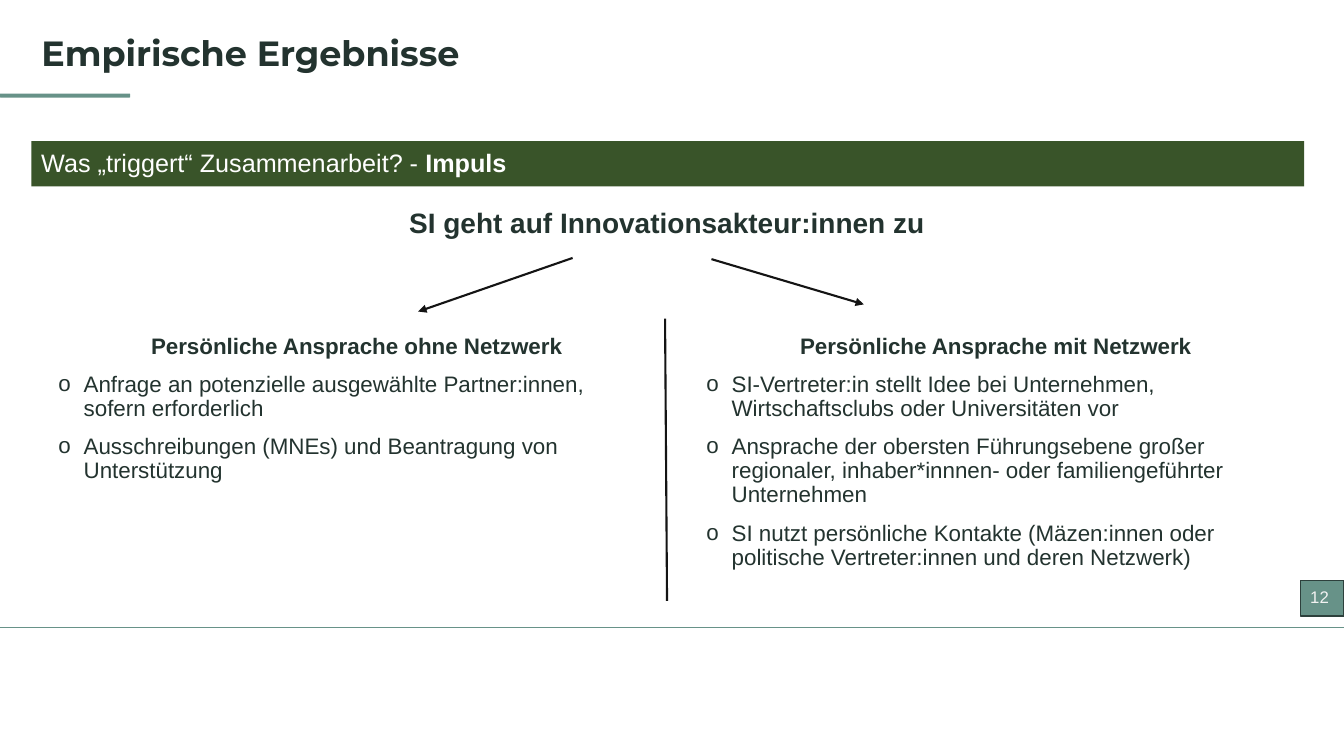
"""Build the slide on what triggers collaboration."""
from lxml import etree
from pptx import Presentation
from pptx.dml.color import RGBColor
from pptx.enum.shapes import MSO_CONNECTOR, MSO_SHAPE
from pptx.enum.text import MSO_ANCHOR, PP_ALIGN
from pptx.oxml.ns import qn
from pptx.util import Cm, Pt

STRAIGHT = MSO_CONNECTOR.STRAIGHT
RECT, ROUND = MSO_SHAPE.RECTANGLE, MSO_SHAPE.ROUNDED_RECTANGLE
TOP, MIDDLE = MSO_ANCHOR.TOP, MSO_ANCHOR.MIDDLE
LEFT, CENTER = PP_ALIGN.LEFT, PP_ALIGN.CENTER

INK, BLACK, WHITE = "23332F", "141414", "FFFFFF"
TEAL, GREEN = "679288", "395429"

TITLE = "Empirische Ergebnisse"
QUESTION, TOPIC = "Was „triggert“ Zusammenarbeit? - ", "Impuls"
HEADLINE = "SI geht auf Innovationsakteur:innen zu"
NUMBER = "12"
COLUMNS = [
    (1.22, 15.54, "Persönliche Ansprache ohne Netzwerk", [
        "Anfrage an potenzielle ausgewählte Partner:innen,\vsofern erforderlich",
        "Ausschreibungen (MNEs) und Beantragung von Unterstützung",
    ]),
    (17.55, 15.09, "Persönliche Ansprache mit Netzwerk", [
        "SI-Vertreter:in stellt Idee bei Unternehmen, Wirtschaftsclubs oder Universitäten vor",
        "Ansprache der obersten Führungsebene großer regionaler, "
        "inhaber*innnen- oder familiengeführter Unternehmen",
        "SI nutzt persönliche Kontakte (Mäzen:innen oder politische "
        "Vertreter:innen und deren Netzwerk)",
    ]),
]
LINES = [
    ((0, 15.8), (33.87, 15.8), TEAL, 0.75, False),
    ((14.43, 6.5), (10.54, 7.85), BLACK, 1.5, True),
    ((17.93, 6.53), (21.77, 7.67), BLACK, 1.5, True),
    ((16.76, 8.03), (16.81, 15.14), BLACK, 1.5, False),
]


def rgb(color):
    return RGBColor.from_string(color)


def add_box(slide, kind, box, fill, line=None):
    sp = slide.shapes.add_shape(kind, *map(Cm, box))
    sp.shadow.inherit = False
    sp.fill.solid()
    sp.fill.fore_color.rgb = rgb(fill)
    if line:
        sp.line.color.rgb = rgb(line)
        sp.line.width = Pt(1)
    else:
        sp.line.fill.background()
    return sp


def add_line(slide, start, end, color, width, arrow):
    cx = slide.shapes.add_connector(STRAIGHT, *map(Cm, start + end))
    cx.line.color.rgb = rgb(color)
    cx.line.width = Pt(width)
    if arrow:
        ln = cx.line._get_or_add_ln()
        etree.SubElement(ln, qn("a:tailEnd"), type="triangle")
    etree.SubElement(cx._element.spPr, qn("a:effectLst"))


def add_text(slide, box):
    tf = slide.shapes.add_textbox(*map(Cm, box)).text_frame
    tf.word_wrap = True
    return tf


def style(p, size, color, bold=False, align=LEFT, font="Arial", before=0):
    p.alignment = align
    p.line_spacing = 0.9
    p.space_before = Pt(before)
    for r in p.runs:
        r.font.name = font
        r.font.size = Pt(size)
        r.font.bold = bold
        r.font.color.rgb = rgb(color)


def add_bullet(p):
    pPr = p._p.get_or_add_pPr()
    pPr.set("marL", str(Cm(0.64)))
    pPr.set("indent", str(-Cm(0.64)))
    clr = etree.SubElement(pPr, qn("a:buClr"))
    etree.SubElement(clr, qn("a:srgbClr"), val=INK)
    etree.SubElement(pPr, qn("a:buFont"), typeface="Arial")
    etree.SubElement(pPr, qn("a:buChar"), char="o")


def add_column(slide, left, width, heading, items):
    tf = add_text(slide, (left, 8.31, width, 7.4))
    tf.text = heading
    style(tf.paragraphs[0], 16, INK, True, CENTER)
    for item in items:
        p = tf.add_paragraph()
        p.text = item
        add_bullet(p)
        style(p, 16, INK, before=10)


def main():
    prs = Presentation()
    prs.slide_width, prs.slide_height = Cm(33.87), Cm(19.05)
    slide = prs.slides.add_slide(prs.slide_layouts[5])

    title = slide.shapes.title
    title.left, title.top, title.width, title.height = map(Cm, (0.79, 0.79, 20, 1.32))
    title.text_frame.text = TITLE
    title.text_frame.vertical_anchor = TOP
    style(title.text_frame.paragraphs[0], 25, INK, True, font="Montserrat")

    add_box(slide, ROUND, (0, 2.36, 3.28, 0.1), TEAL)
    bar = add_box(slide, RECT, (0.79, 3.56, 32.08, 1.14), GREEN)
    tf = bar.text_frame
    tf.text = QUESTION
    tf.vertical_anchor = MIDDLE
    p = tf.paragraphs[0]
    r = p.add_run()
    r.text = TOPIC
    style(p, 18, WHITE)
    r.font.bold = True

    tf = add_text(slide, (0.76, 5.16, 32.1, 1.32))
    tf.text = HEADLINE
    style(tf.paragraphs[0], 20, INK, True, CENTER)

    for column in COLUMNS:
        add_column(slide, *column)
    for line in LINES:
        add_line(slide, *line)

    badge = add_box(slide, RECT, (32.77, 14.63, 1.1, 0.89), TEAL, "2D403C")
    badge.text_frame.text = NUMBER
    badge.text_frame.word_wrap = False
    badge.text_frame.vertical_anchor = MIDDLE
    style(badge.text_frame.paragraphs[0], 12, "F2F2F2")

    prs.save("out.pptx")


if __name__ == "__main__":
    main()
